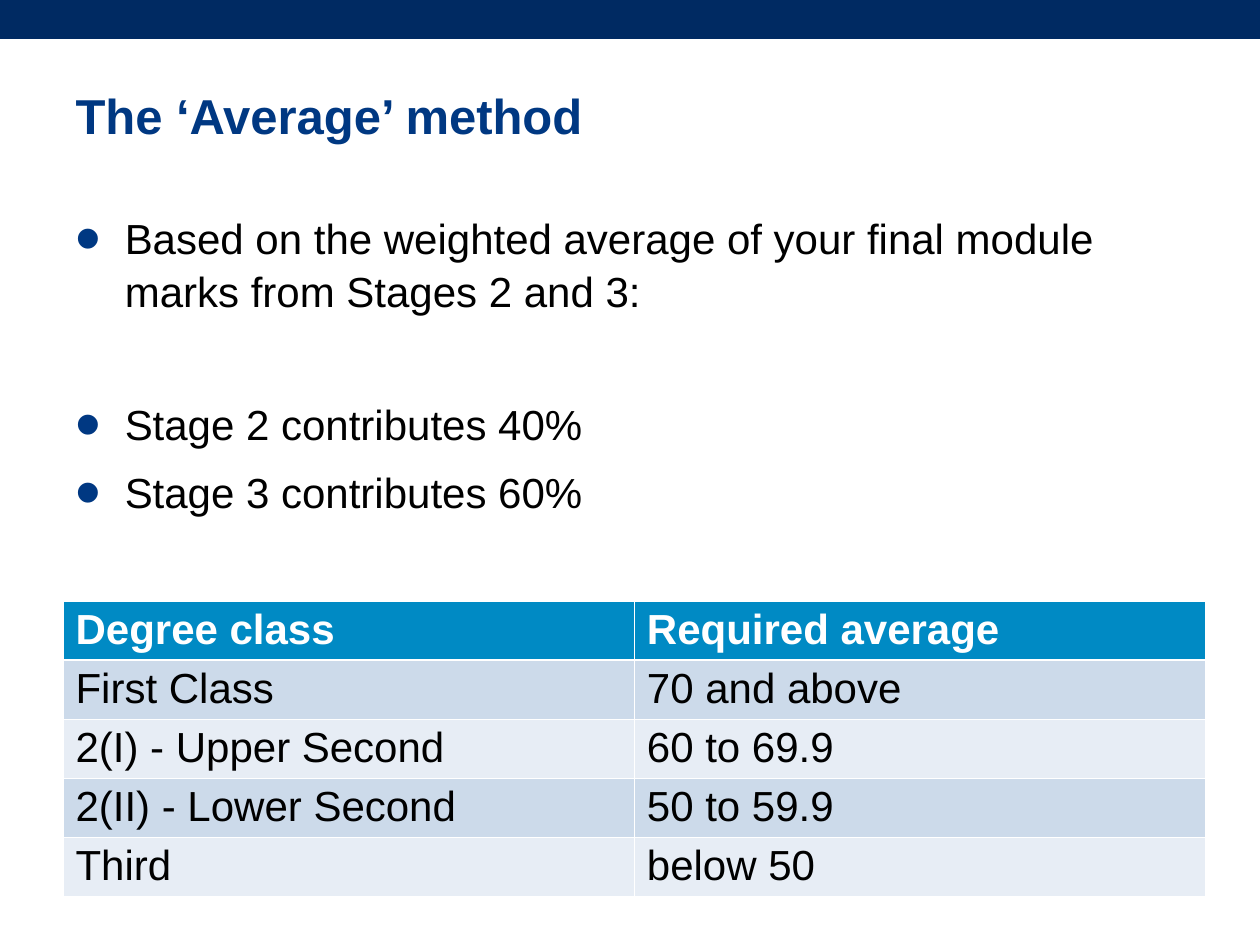
from lxml import etree
from pptx import Presentation
from pptx import util as u
from pptx.dml.color import RGBColor
from pptx.enum import shapes, text
from pptx.oxml.ns import qn

HUES = {
    "bar": "002A62", "title": "003882", "ink": "000000", "white": "FFFFFF",
    "head": "008AC4", "odd": "CCDAEA", "even": "E7EDF5",
}
WIDE, HIGH = u.Inches(10), u.Inches(7.5)
LEFT, SPAN = 0.05, 0.907  # shares of the slide's width
ROW = u.Inches(0.47)

# Text and space before in points
POINTS = [
    ("Based on the weighted average of your final module marks from Stages 2 and 3:", 0),
    ("Stage 2 contributes 40%", 45.8),
    ("Stage 3 contributes 60%", 8.4),
]
GRADES = [
    ("Degree class", "Required average"),
    ("First Class", "70 and above"),
    ("2(I) - Upper Second", "60 to 69.9"),
    ("2(II) - Lower Second", "50 to 59.9"),
    ("Third", "below 50"),
]


def hue(name):
    return RGBColor.from_string(HUES[name])


def style(para, size, tone, bold=False):
    font = para.font
    font.name, font.size, font.bold = "Arial", u.Pt(size), bold
    font.color.rgb = hue(tone)
    para.alignment = text.PP_ALIGN.LEFT


def place(shape, x, y, w, h):
    """Set the box from shares of the slide's size."""
    shape.left, shape.top = int(WIDE * x), int(HIGH * y)
    shape.width, shape.height = int(WIDE * w), int(HIGH * h)


def frame(shape, anchor):
    box = shape.text_frame
    box.auto_size = text.MSO_AUTO_SIZE.NONE
    box.word_wrap = True
    box.vertical_anchor = anchor
    return box


def bullet(para):
    props = para._p.get_or_add_pPr()
    props.set("marL", str(u.Inches(0.39)))
    props.set("indent", str(-u.Inches(0.39)))
    tint = etree.SubElement(props, qn("a:buClr"))
    etree.SubElement(tint, qn("a:srgbClr"), val=HUES["title"])
    etree.SubElement(props, qn("a:buSzPct"), val="175000")
    etree.SubElement(props, qn("a:buFont"), typeface="Arial")
    etree.SubElement(props, qn("a:buChar"), char="•")


def add_bar(slide):
    bar = slide.shapes.add_shape(
        shapes.MSO_SHAPE.RECTANGLE, 0, 0, WIDE, u.Inches(0.31))
    bar.shadow.inherit = False
    bar.fill.solid()
    bar.fill.fore_color.rgb = hue("bar")
    bar.line.fill.background()


def add_title(slide, words):
    title = slide.shapes.title
    place(title, LEFT, 0.08, SPAN, 0.084)
    para = frame(title, text.MSO_ANCHOR.MIDDLE).paragraphs[0]
    para.text = words
    style(para, 28, "title", True)


def add_list(slide, items):
    body = slide.placeholders[1]
    place(body, LEFT, 0.216, 0.86, 0.715)
    box = frame(body, text.MSO_ANCHOR.TOP)
    for i, (words, gap) in enumerate(items):
        para = box.add_paragraph() if i else box.paragraphs[0]
        para.text = words
        bullet(para)
        para.line_spacing = 1.05
        para.space_before = u.Pt(gap)
        style(para, 24, "ink")


def add_grid(slide, rows):
    grid = slide.shapes.add_table(
        len(rows), len(rows[0]), int(WIDE * LEFT), int(HIGH * 0.636),
        int(WIDE * SPAN), ROW * len(rows)).table
    for r, row in enumerate(rows):
        fill = "head" if r == 0 else ("odd" if r % 2 else "even")
        for c, words in enumerate(row):
            cell = grid.cell(r, c)
            cell.margin_top = cell.margin_bottom = u.Inches(0.04)
            cell.fill.solid()
            cell.fill.fore_color.rgb = hue(fill)
            cell.text = words
            style(cell.text_frame.paragraphs[0], 24,
                  "ink" if r else "white", r == 0)


def main():
    deck = Presentation()
    deck.slide_width, deck.slide_height = WIDE, HIGH
    slide = deck.slides.add_slide(deck.slide_layouts[1])
    # Heading
    add_bar(slide)
    add_title(slide, "The ‘Average’ method")
    # Content
    add_list(slide, POINTS)
    add_grid(slide, GRADES)
    deck.save("out.pptx")


if __name__ == "__main__":
    main()
